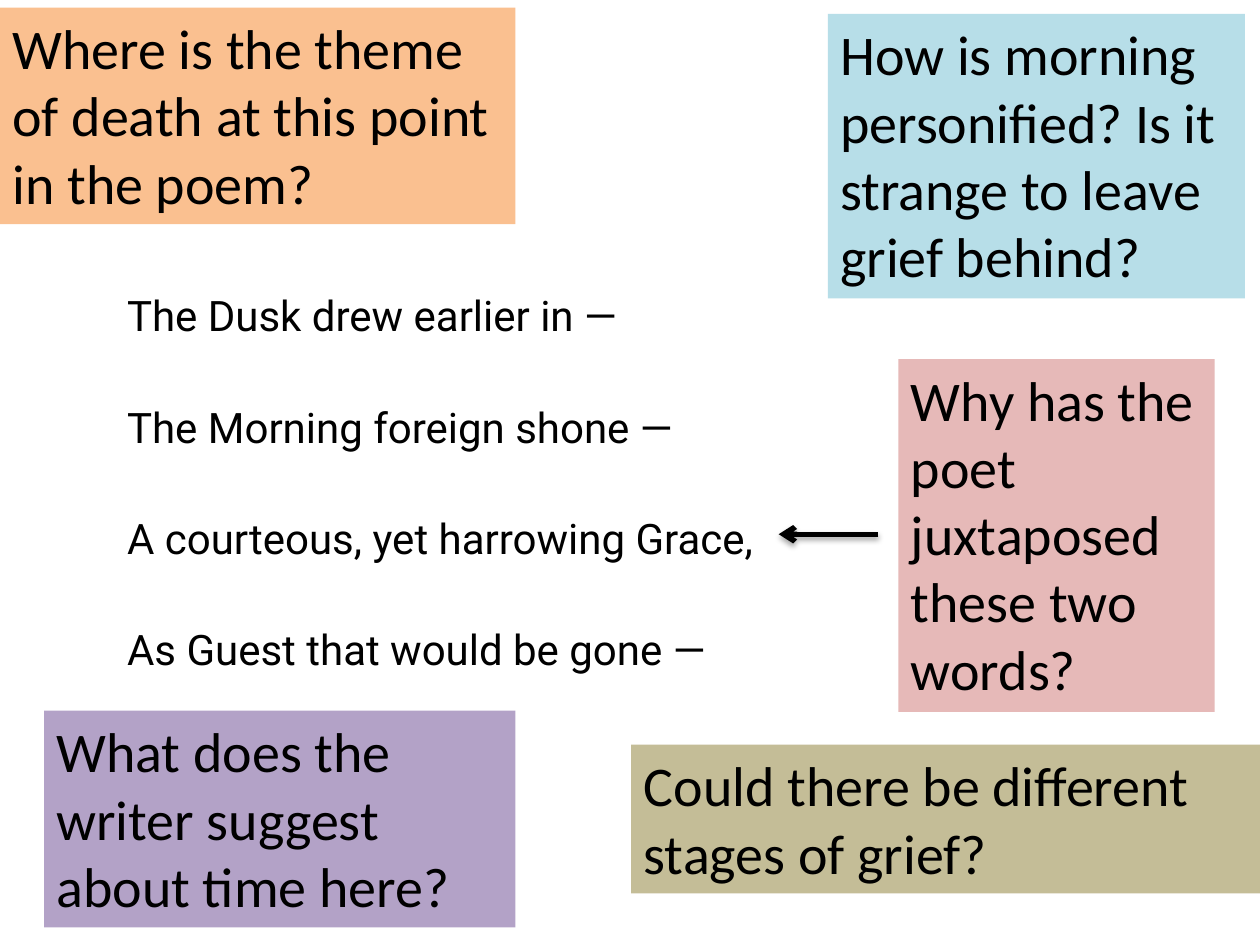
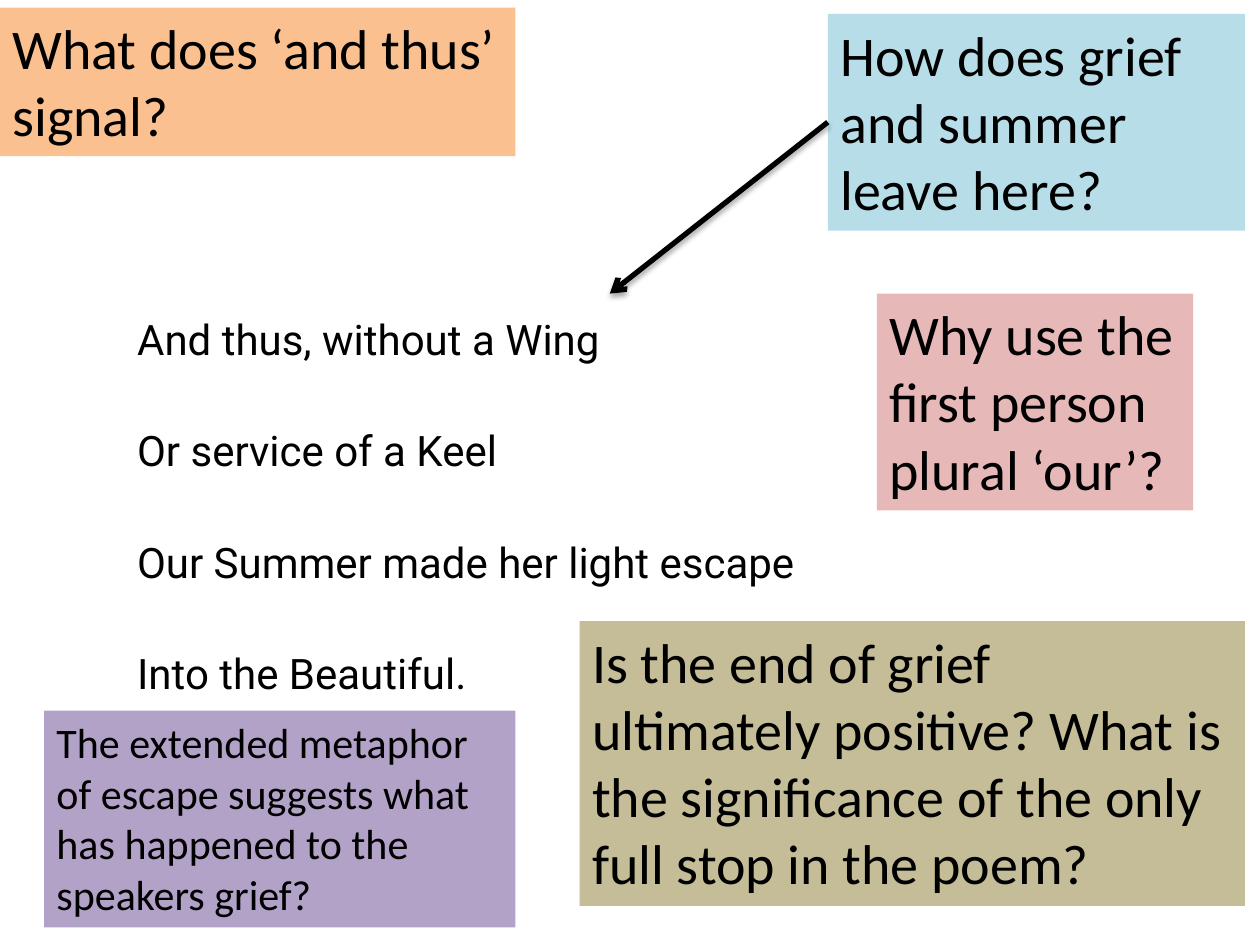
from dataclasses import dataclass

from lxml import etree
from pptx import Presentation, util as u
from pptx.dml.color import RGBColor
from pptx.enum import shapes, text
from pptx.oxml.ns import qn


@dataclass(frozen=True)
class Theme:
    ink: str = "000000"
    peach: str = "FAC090"
    sky: str = "B7DEE8"
    lilac: str = "B3A2C7"
    khaki: str = "C4BD97"
    rose: str = "E6B9B8"
    note_font: str = "Calibri"
    verse_font: str = "Roboto"
    large: int = 32
    small: int = 24
    leading: float = 1.215
    stroke: int = 3


theme = Theme()
deck = Presentation()
deck.slide_width, deck.slide_height = u.Inches(10), u.Inches(7.5)

# Grid of square cells: 100 columns by 75 rows
CELL = deck.slide_width / 100


def grid(*counts):
    return [round(count * CELL) for count in counts]


def add_text(page, place, lines, font, size, fill=None, **spacing):
    box = page.shapes.add_textbox(*grid(*place))
    if fill:
        box.fill.solid()
        box.fill.fore_color.rgb = RGBColor.from_string(fill)
    frame = box.text_frame
    frame.word_wrap = True
    frame.auto_size = text.MSO_AUTO_SIZE.SHAPE_TO_FIT_TEXT
    for index, line in enumerate(lines):
        para = frame.paragraphs[0] if index == 0 else frame.add_paragraph()
        for name, value in spacing.items():
            setattr(para, name, value)
        span = para.add_run()
        span.text = line
        for name, value in {"name": font, "size": u.Pt(size)}.items():
            setattr(span.font, name, value)
        span.font.color.rgb = RGBColor.from_string(theme.ink)
    return box


# Each note: fill, left, top, width, number of lines, size, wording
pages = [
    {
        "notes": [
            (theme.peach, 0, 0.6, 40.9, 3, theme.large,
             "Where is the theme of death at this point in the poem?"),
            (theme.sky, 65.7, 1.1, 33.1, 4, theme.large,
             "How is morning personified? Is it strange to leave grief behind?"),
            (theme.lilac, 3.5, 56.4, 37.4, 3, theme.large,
             "What does the writer suggest about time here?"),
            (theme.khaki, 50.1, 59.1, 49.9, 2, theme.large,
             "Could there be different stages of grief?"),
            (theme.rose, 71.3, 28.5, 25.1, 5, theme.large,
             "Why has the poet juxtaposed these two words?"),
        ],
        "verse_at": (9.1, 18.5, 56.9, 53.5),
        "verse": ["The Dusk drew earlier in —",
                  "The Morning foreign shone —",
                  "A courteous, yet harrowing Grace,",
                  "As Guest that would be gone —"],
        "arrow": (69.7, 42.4, 61.8, 42.4),
        "arrow_from": None,
    },
    {
        "notes": [
            (theme.peach, 0, 0.6, 40.9, 2, theme.large,
             "What does ‘and thus’ signal?"),
            (theme.sky, 65.7, 1.1, 33.1, 3, theme.large,
             "How does grief and summer leave here?"),
            (theme.lilac, 3.5, 56.4, 37.4, 4, theme.small,
             "The extended metaphor of escape suggests what has happened "
             "to the speakers grief?"),
            (theme.khaki, 46, 49.3, 52.8, 4, theme.large,
             "Is the end of grief ultimately positive? What is the "
             "significance of the only full stop in the poem?"),
            (theme.rose, 69.6, 23.3, 25.1, 3, theme.large,
             "Why use the first person plural ‘our’?"),
        ],
        "verse_at": (9.9, 20.4, 59.4, 35.7),
        "verse": ["And thus, without a Wing",
                  "Or service of a Keel",
                  "Our Summer made her light escape",
                  "Into the Beautiful."],
        "arrow": (65.7, 9.6, 48.4, 23.3),
        "arrow_from": theme.sky,
    },
]

for content in pages:
    page = deck.slides.add_slide(deck.slide_layouts[6])

    # Question notes, as tall as their lines plus the top and bottom insets
    notes = {}
    for fill, left, top, width, count, size, wording in content["notes"]:
        height = count * size * theme.leading * u.Pt(1) / CELL + 1
        notes[fill] = add_text(page, (left, top, width, height), [wording],
                               theme.note_font, size, fill)

    # Stanza
    add_text(page, content["verse_at"], content["verse"], theme.verse_font,
             theme.small, line_spacing=2.0, space_before=u.Pt(6))

    # Arrow from a note to the stanza
    arrow = page.shapes.add_connector(shapes.MSO_CONNECTOR.STRAIGHT,
                                      *grid(*content["arrow"]))
    if content["arrow_from"]:
        arrow.begin_connect(notes[content["arrow_from"]], 1)
    arrow.line.width = u.Pt(theme.stroke)
    arrow.line.color.rgb = RGBColor.from_string(theme.ink)
    properties = arrow.line._get_or_add_ln().getparent()
    etree.SubElement(properties.find(qn("a:ln")), qn("a:tailEnd"), type="arrow")

    # Soft shadow under the arrow
    effects = etree.SubElement(properties, qn("a:effectLst"))
    shadow = etree.SubElement(effects, qn("a:outerShdw"), blurRad="40000",
                              dist="23000", dir="5400000", rotWithShape="0")
    tint = etree.SubElement(shadow, qn("a:srgbClr"), val=theme.ink)
    etree.SubElement(tint, qn("a:alpha"), val="35000")

deck.save("out.pptx")
